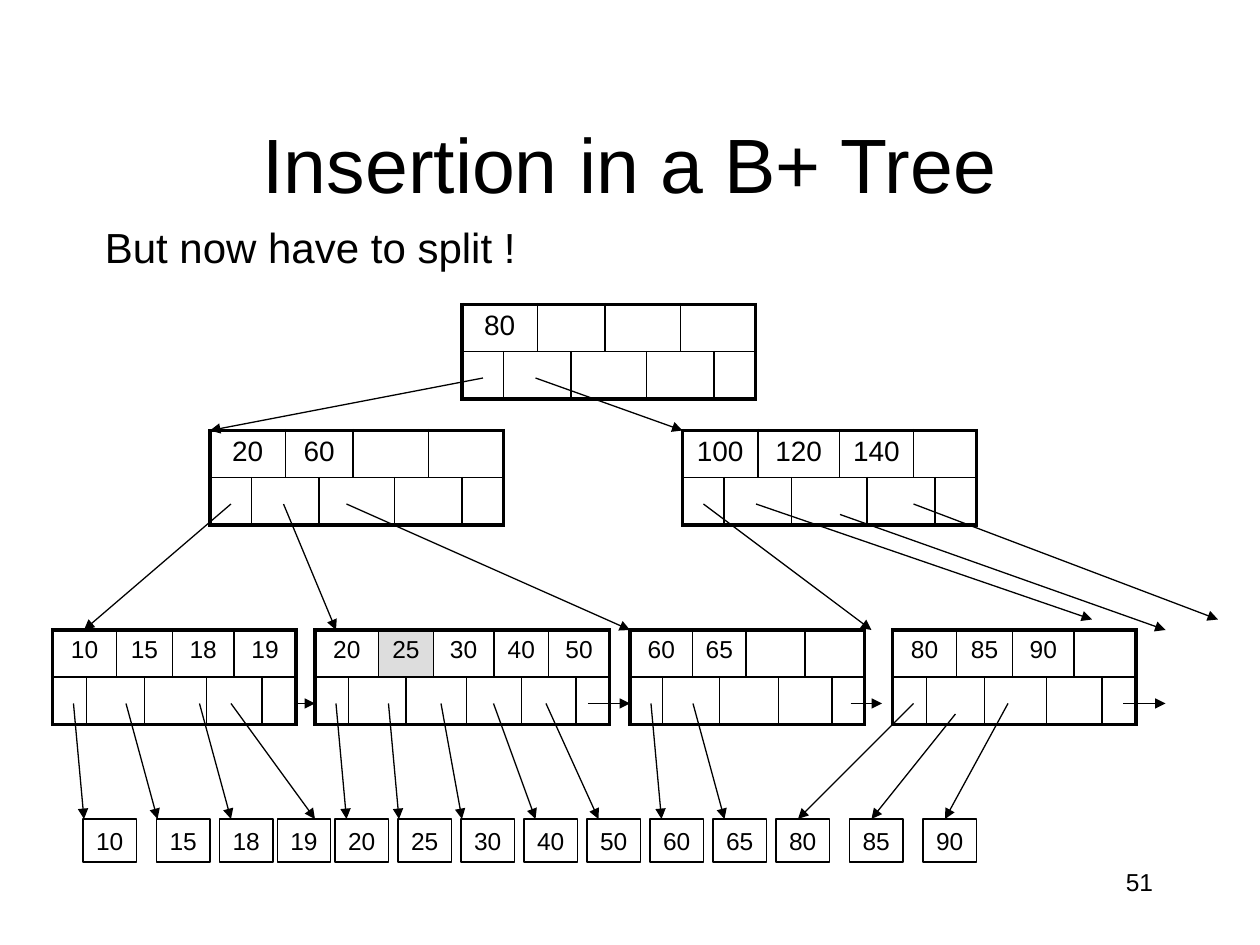
from collections import namedtuple

from lxml.etree import SubElement
from pptx import Presentation
from pptx.dml.color import RGBColor
from pptx.enum.shapes import MSO_CONNECTOR, MSO_SHAPE
from pptx.enum.text import MSO_ANCHOR, PP_ALIGN
from pptx.oxml import parse_xml
from pptx.oxml.ns import nsdecls, qn
from pptx.util import Cm, Pt

COLORS = {"ink": "000000", "new_key": "DDDDDD"}
FONT = "Arial"
UNITS_PER_INCH = 12
NODE_WIDTHS = [11, 9, 9, 9, 11, 9, 9, 11]
FULL_WIDTHS = [33, 27, 27, 38, 22, 37, 17, 33]
SPLIT_WIDTHS = [11, 9, 9, 9, 11, 9, 9, 9, 9, 11]
THIN, THICK = 1, 2.25

Box = namedtuple("Box", "x y w h")
Pointer = namedtuple("Pointer", "dx dy to_x to_y")


def grid(units):
    return Cm(units * 2.54 / UNITS_PER_INCH)


def place(box):
    return [grid(length) for length in box]


def color(name):
    return RGBColor.from_string(COLORS[name])


def write(frame, text, size, align=PP_ALIGN.LEFT):
    frame.text = text
    paragraph = frame.paragraphs[0]
    paragraph.alignment = align
    font = paragraph.runs[0].font
    for attribute, value in {"name": FONT, "size": Pt(size)}.items():
        setattr(font, attribute, value)
    font.color.rgb = color("ink")


def add_heading(slide, box):
    title = slide.shapes.title
    title.left, title.top, title.width, title.height = place(box)
    title.text_frame.vertical_anchor = MSO_ANCHOR.MIDDLE
    write(title.text_frame, "Insertion in a B+ Tree", 44, PP_ALIGN.CENTER)


def add_caption(slide, box, text, size, align=PP_ALIGN.LEFT, wrap=False):
    caption = slide.shapes.add_textbox(*place(box)).text_frame
    caption.word_wrap = wrap
    write(caption, text, size, align)


def add_arrow(slide, start, end):
    arrow = slide.shapes.add_connector(MSO_CONNECTOR.STRAIGHT, *place(start + end))
    arrow.line.color.rgb = color("ink")
    arrow.line.width = Pt(0.75)
    properties = arrow._element.spPr
    SubElement(properties.find(qn("a:ln")), qn("a:tailEnd"), type="triangle")
    SubElement(properties, qn("a:effectLst"))


def set_borders(cell, weights):
    properties = cell._tc.get_or_add_tcPr()
    for index, (side, weight) in enumerate(weights.items()):
        properties.insert(index, parse_xml(
            f'<a:ln{side} {nsdecls("a")} w="{Pt(weight)}"><a:solidFill>'
            f'<a:srgbClr val="{COLORS["ink"]}"/></a:solidFill></a:ln{side}>'))


def add_node(slide, box, keys, size, pointers, widths=NODE_WIDTHS, new_key=None):
    count = len(widths)
    table = slide.shapes.add_table(2, count, *place(box)).table
    table.first_row = table.horz_banding = False
    for column, width in zip(table.columns, widths):
        column.width = grid(box.w * width / sum(widths))
    for row in table.rows:
        row.height = grid(box.h / 2)

    for row in range(2):
        for start in range(row, count - 1, 2):
            table.cell(row, start).merge(table.cell(row, start + 1))
        for column in range(count):
            cell = table.cell(row, column)
            cell.margin_bottom = 0
            cell.fill.background()
            set_borders(cell, {
                "L": THICK if column == 0 else THIN,
                "R": THICK if column + (2 if row == 0 else 1) >= count else THIN,
                "T": THICK if row == 0 else THIN,
                "B": THICK if row == 1 else THIN,
            })

    for index, key in enumerate(keys):
        cell = table.cell(0, 2 * index)
        write(cell.text_frame, str(key), size, PP_ALIGN.CENTER)
        if key == new_key:
            cell.fill.solid()
            cell.fill.fore_color.rgb = color("new_key")

    for pointer in pointers:
        add_arrow(slide, (box.x + pointer.dx, box.y + pointer.dy),
                  (pointer.to_x, pointer.to_y))


def add_records(slide, box, records):
    for key, offset in records.items():
        record = slide.shapes.add_shape(
            MSO_SHAPE.RECTANGLE, *place(box._replace(x=box.x + offset)))
        record.shadow.inherit = False
        record.fill.background()
        record.line.color.rgb = color("ink")
        record.line.width = Pt(0.75)
        record.text_frame.word_wrap = False
        record.text_frame.vertical_anchor = MSO_ANCHOR.MIDDLE
        write(record.text_frame, str(key), 14, PP_ALIGN.CENTER)


def record_pointers(targets, link):
    return [Pointer(dx, 7, to_x, 78) for dx, to_x in targets] + [Pointer(*link)]


def add_inner_nodes(slide):
    add_node(slide, Box(44, 29, 28, 9), [80], 16,
             [Pointer(2, 7, 20, 41), Pointer(7, 7, 65, 41)])
    add_node(slide, Box(20, 41, 28, 9), [20, 60], 16,
             [Pointer(2, 7, 8, 60), Pointer(7, 7, 32, 60), Pointer(13, 7, 60, 60)])
    add_node(slide, Box(65, 41, 28, 9), [100, 120, 140], 16,
             [Pointer(2, 7, 83, 60), Pointer(7, 7, 104, 59),
              Pointer(15, 8, 111, 60), Pointer(22, 7, 116, 59)], FULL_WIDTHS)


def add_leaves(slide):
    add_node(slide, Box(5, 60, 23, 9), [10, 15, 18, 19], 14,
             record_pointers([(2, 8), (7, 15), (14, 22), (17, 30)], (23, 7, 30, 67)))
    add_node(slide, Box(30, 60, 27.8, 9), [20, 25, 30, 40, 50], 14,
             record_pointers([(2, 33), (7, 38), (12, 44), (17, 51), (22, 57)],
                             (26, 7, 60, 67)), SPLIT_WIDTHS, new_key=25)
    add_node(slide, Box(60, 60, 22, 9), [60, 65], 14,
             record_pointers([(2, 63), (6, 69)], (21, 7, 84, 67)))
    add_node(slide, Box(85, 60, 23, 9), [80, 85, 90], 14,
             [Pointer(2, 7, 76, 78), Pointer(6, 8, 83, 78),
              Pointer(11, 7, 90, 78), Pointer(22, 7, 111, 67)])


def main():
    presentation = Presentation()
    presentation.slide_width, presentation.slide_height = Cm(25.4), Cm(19.05)
    slide = presentation.slides.add_slide(presentation.slide_layouts[5])
    add_heading(slide, Box(9, 8, 102, 15))
    add_caption(slide, Box(8.8, 20.5, 41.9, 6), "But now have to split !", 24)
    add_inner_nodes(slide)
    add_leaves(slide)
    evenly_spaced = {key: 24 + 6 * index
                     for index, key in enumerate([20, 25, 30, 40, 50, 60, 65, 80])}
    add_records(slide, Box(7.9, 78, 5.1, 4.1),
                {10: 0, 15: 7, 18: 13, 19: 18.5, **evenly_spaced, 85: 73, 90: 80})
    add_caption(slide, Box(86, 82, 25, 6), "51", 14, PP_ALIGN.RIGHT, wrap=True)
    presentation.save("out.pptx")


if __name__ == "__main__":
    main()
